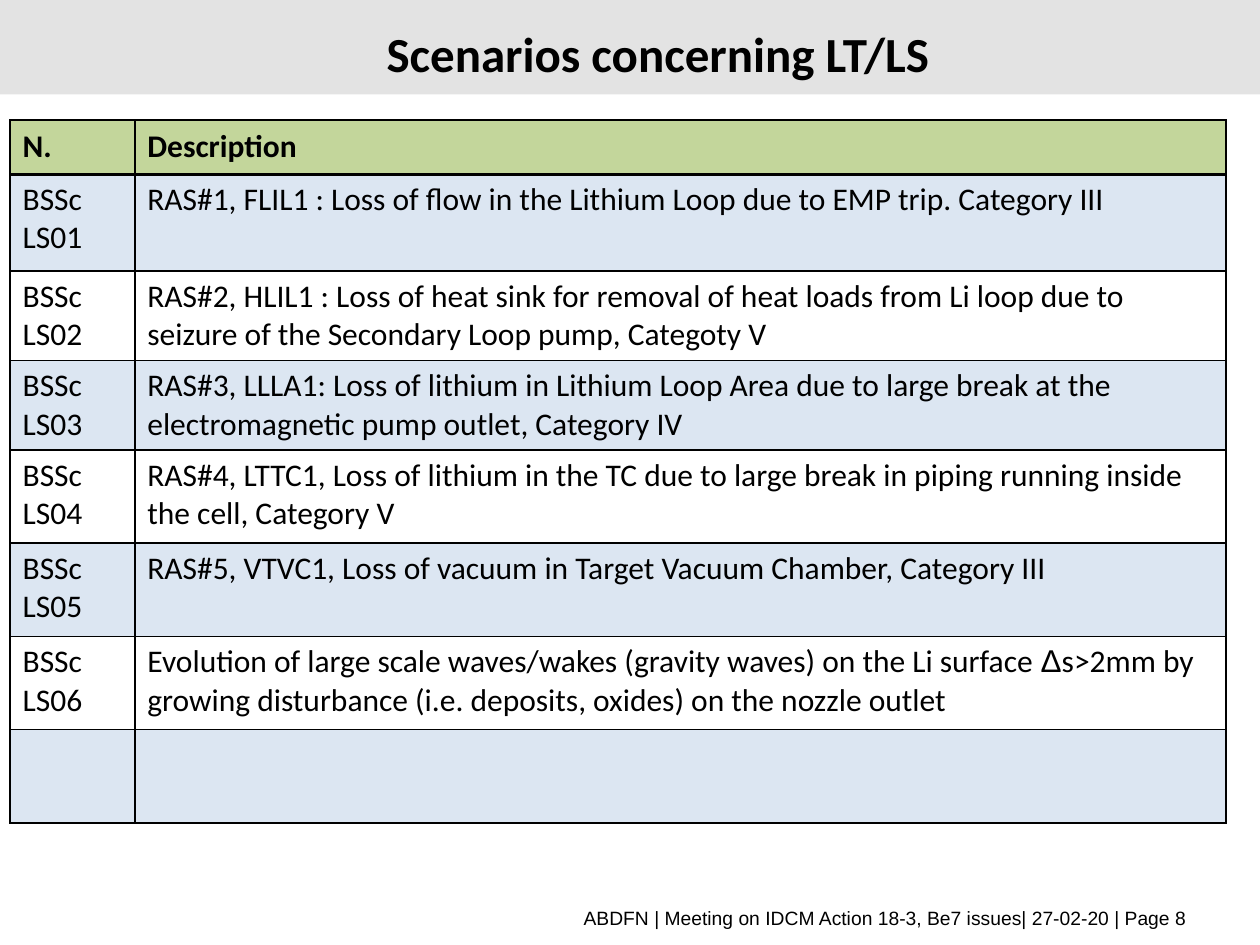
from lxml.etree import SubElement
from pptx import Presentation
from pptx.dml.color import RGBColor
from pptx.enum.shapes import MSO_SHAPE
from pptx.enum.text import MSO_ANCHOR, PP_ALIGN
from pptx.oxml.ns import qn
from pptx.util import Inches, Pt

W, H = Inches(10), Inches(7.5)
COLORS = {"black": "000000", "band": "E3E3E3", "head": "C3D69B",
          "blue": "DCE6F2", "white": "FFFFFF"}
TITLE = {"name": "Calibri", "size": Pt(28), "bold": True}
FOOT = {"name": "Arial", "size": Pt(11)}
HEAD = {"name": "Calibri", "size": Pt(18), "bold": True}
BODY = {"name": "Calibri", "size": Pt(18), "bold": False}
SYMBOL = {**BODY, "name": "Arial"}

COLS = (0.99, 8.66)
ROWS = (0.43, 0.77, 0.71, 0.71, 0.74, 0.74, 0.74, 0.74)
SCENARIOS = (
    "RAS#1, FLIL1 : Loss of flow in the Lithium Loop due to EMP trip. Category III",
    "RAS#2, HLIL1 : Loss of heat sink for removal of heat loads from Li loop due to "
    "seizure of the Secondary Loop pump, Categoty V",
    "RAS#3, LLLA1: Loss of lithium in Lithium Loop Area due to large break at the "
    "electromagnetic pump outlet, Category IV",
    "RAS#4, LTTC1, Loss of lithium in the TC due to large break in piping running "
    "inside the cell, Category V",
    "RAS#5, VTVC1, Loss of vacuum in Target Vacuum Chamber, Category III",
    "Evolution of large scale waves/wakes (gravity waves) on the Li surface Δs>2mm by "
    "growing disturbance (i.e. deposits, oxides) on the nozzle outlet",
)


def rgb(name):
    """Return a named colour."""
    return RGBColor.from_string(COLORS[name])


def share(x, y, w, h):
    """Turn shares of the slide into a box of lengths."""
    return int(x * W), int(y * H), int(w * W), int(h * H)


def add_run(p, text, fmt):
    """Add a run with the given font values."""
    r = p.add_run()
    r.text = text
    for key, value in fmt.items():
        setattr(r.font, key, value)
    r.font.color.rgb = rgb("black")


def add_text(slide, box, text, fmt, align, line=None):
    """Place one line of text, centred vertically in its box."""
    tf = slide.shapes.add_textbox(*box).text_frame
    tf.word_wrap = True
    tf.vertical_anchor = MSO_ANCHOR.MIDDLE
    p = tf.paragraphs[0]
    p.alignment = align
    p.line_spacing = line
    add_run(p, text, fmt)


def add_header(slide, box):
    """Place the grey band and the title over it."""
    sp = slide.shapes.add_shape(MSO_SHAPE.RECTANGLE, *box)
    sp.shadow.inherit = False
    sp.fill.solid()
    sp.fill.fore_color.rgb = rgb("band")
    sp.line.fill.background()
    x, y, w, h = box
    area = (x + int(0.091 * w), y + int(0.24 * h), int(0.862 * w), int(0.67 * h))
    add_text(slide, area, "Scenarios concerning LT/LS", TITLE, PP_ALIGN.CENTER, Pt(32))


def set_borders(cell, bottom):
    """Draw black borders round a cell."""
    tcPr = cell._tc.get_or_add_tcPr()
    for side, width in (("L", 1), ("R", 1), ("T", 1), ("B", bottom)):
        ln = SubElement(tcPr, qn(f"a:ln{side}"), w=str(Pt(width)))
        fill = SubElement(ln, qn("a:solidFill"))
        SubElement(fill, qn("a:srgbClr"), val=COLORS["black"])


def fill_cell(cell, text, fmt):
    """Write cell text, with line breaks and the Greek symbol in its own font."""
    p = cell.text_frame.paragraphs[0]
    for i, line in enumerate(text.split("\n")):
        if i:
            p.add_line_break()
        before, symbol, after = line.partition("Δ")
        for part, style in ((before, fmt), (symbol, SYMBOL), (after, fmt)):
            if part:
                add_run(p, part, style)


def add_scenarios(slide, box):
    """Place the scenario table, scaling its columns and rows to the box."""
    x, y, w, h = box
    codes = [(f"BSSc\nLS{n:02}", text) for n, text in enumerate(SCENARIOS, 1)]
    data = [("N.", "Description"), *codes, ("", "")]
    table = slide.shapes.add_table(len(ROWS), len(COLS), *box).table
    table.horz_banding = table.first_row = False
    for col, width in zip(table.columns, COLS):
        col.width = int(w * width / sum(COLS))
    for i, (row, height) in enumerate(zip(table.rows, ROWS)):
        row.height = int(h * height / sum(ROWS))
        color = "blue" if i % 2 else "white"
        for cell, text in zip(row.cells, data[i]):
            set_borders(cell, 1 if i else 2)
            cell.fill.solid()
            cell.fill.fore_color.rgb = rgb(color if i else "head")
            cell.vertical_anchor = MSO_ANCHOR.TOP if i else MSO_ANCHOR.MIDDLE
            fill_cell(cell, text, BODY if i else HEAD)


def add_footer(slide, box):
    """Place the meeting line at the bottom right."""
    add_text(slide, box, "ABDFN | Meeting on IDCM Action 18-3, Be7 issues| 27-02-20 | Page 8",
             FOOT, PP_ALIGN.RIGHT)


def main():
    """Build the slide and save it."""
    prs = Presentation()
    prs.slide_width, prs.slide_height = W, H
    slide = prs.slides.add_slide(prs.slide_layouts[6])
    add_header(slide, share(0, 0, 1, 0.1))
    add_scenarios(slide, share(0.008, 0.127, 0.965, 0.744))
    add_footer(slide, share(0.051, 0.952, 0.901, 0.039))
    prs.save("out.pptx")


if __name__ == "__main__":
    main()
